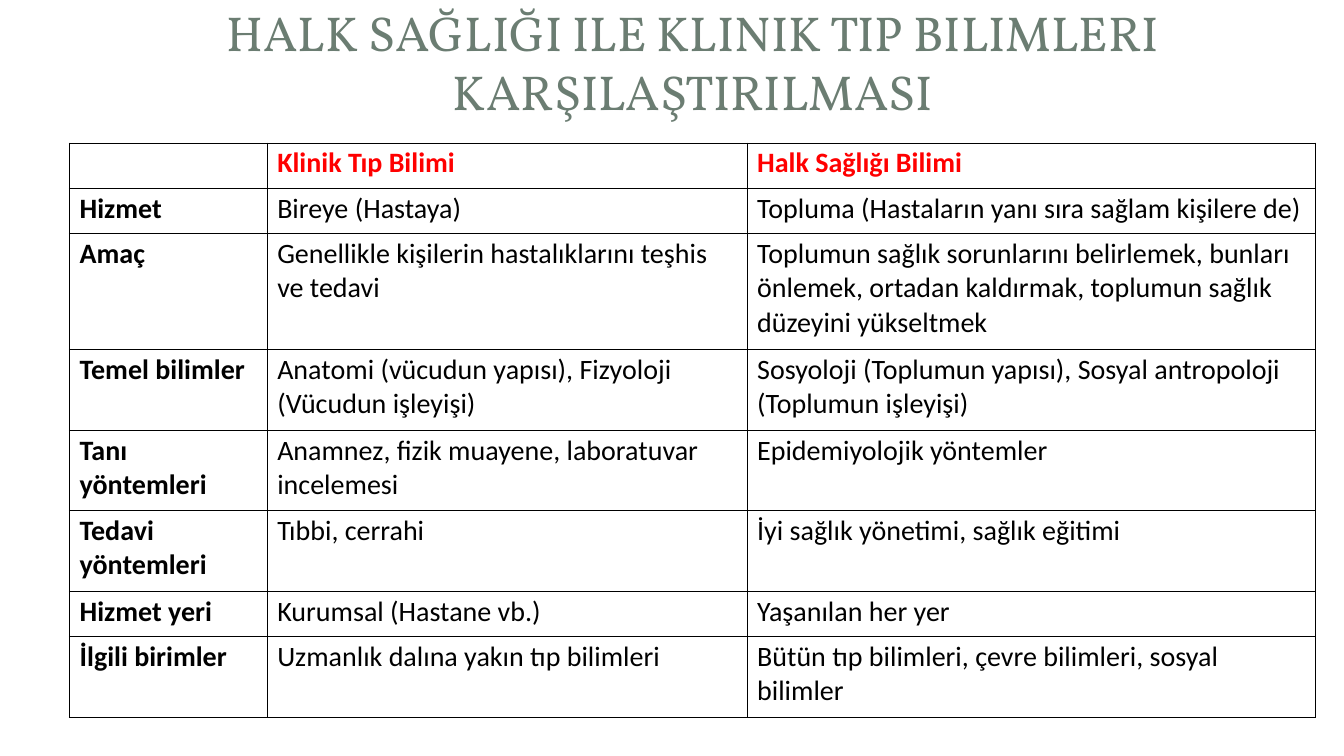
from dataclasses import dataclass

from lxml.etree import SubElement
from pptx import Presentation
from pptx.dml.color import RGBColor
from pptx.enum.text import MSO_ANCHOR, PP_ALIGN
from pptx.oxml.ns import qn
from pptx.util import Inches, Pt


@dataclass(frozen=True)
class Theme:
    title_font: str = "Vollkorn"
    body_font: str = "Calibri"
    title_size: int = 35
    body_size: int = 20
    title: str = "6B7D72"
    head: str = "FF0000"
    ink: str = "000000"
    rule: int = 1


THEME = Theme()
TITLE = "HALK SAĞLIĞI ILE KLINIK TIP BILIMLERI KARŞILAŞTIRILMASI"
COLS = [1.96, 4.76, 5.64]
LINE, PAD = 0.35, 0.1
ROWS = [
    ("", "Klinik Tıp Bilimi", "Halk Sağlığı Bilimi"),
    ("Hizmet", "Bireye (Hastaya)",
     "Topluma (Hastaların yanı sıra sağlam kişilere de)"),
    ("Amaç", "Genellikle kişilerin hastalıklarını teşhis\nve tedavi",
     "Toplumun sağlık sorunlarını belirlemek, bunları önlemek, "
     "ortadan kaldırmak, toplumun sağlık düzeyini yükseltmek"),
    ("Temel bilimler",
     "Anatomi (vücudun yapısı), Fizyoloji (Vücudun işleyişi)",
     "Sosyoloji (Toplumun yapısı), Sosyal antropoloji (Toplumun işleyişi)"),
    ("Tanı\nyöntemleri",
     "Anamnez, fizik muayene, laboratuvar\nincelemesi",
     "Epidemiyolojik yöntemler"),
    ("Tedavi\nyöntemleri", "Tıbbi, cerrahi",
     "İyi sağlık yönetimi, sağlık eğitimi"),
    ("Hizmet yeri", "Kurumsal (Hastane vb.)", "Yaşanılan her yer"),
    ("İlgili birimler", "Uzmanlık dalına yakın tıp bilimleri",
     "Bütün tıp bilimleri, çevre bilimleri, sosyal\nbilimler"),
]
LINES = [1, 1, 3, 2, 2, 2, 1, 2]


def style(frame, font, size, color, bold=False):
    for para in frame.paragraphs:
        para.font.name = font
        para.font.size = Pt(size)
        para.font.bold = bold
        para.font.color.rgb = RGBColor.from_string(color)


def add_title(slide, left, top, width, height):
    box = slide.shapes.add_textbox(
        Inches(left), Inches(top), Inches(width), Inches(height))
    frame = box.text_frame
    frame.word_wrap = True
    frame.vertical_anchor = MSO_ANCHOR.MIDDLE
    frame.margin_left = frame.margin_right = frame.margin_bottom = 0
    frame.margin_top = Inches(0.01)
    frame.text = TITLE
    frame.paragraphs[0].alignment = PP_ALIGN.CENTER
    style(frame, THEME.title_font, THEME.title_size, THEME.title)


def add_rules(cell):
    """Draw a line on all four sides of the cell."""
    props = cell._tc.get_or_add_tcPr()
    for index, side in enumerate(("lnL", "lnR", "lnT", "lnB")):
        line = props.makeelement(qn(f"a:{side}"), w=str(Pt(THEME.rule)))
        fill = SubElement(line, qn("a:solidFill"))
        SubElement(fill, qn("a:srgbClr"), val=THEME.ink)
        props.insert(index, line)


def fill_cell(cell, text, color, bold):
    cell.fill.background()
    cell.margin_left = Inches(PAD)
    cell.margin_right = cell.margin_bottom = 0
    cell.margin_top = Inches(0.03)
    cell.text_frame.text = text
    style(cell.text_frame, THEME.body_font, THEME.body_size, color, bold)
    add_rules(cell)


def add_grid(slide, left, top):
    highs = [LINE * count + PAD for count in LINES]
    table = slide.shapes.add_table(
        len(ROWS), len(COLS), Inches(left), Inches(top),
        Inches(sum(COLS)), Inches(sum(highs))).table
    table.horz_banding = False
    for col, width in zip(table.columns, COLS):
        col.width = Inches(width)
    for r, (texts, high) in enumerate(zip(ROWS, highs)):
        table.rows[r].height = Inches(high)
        for c, text in enumerate(texts):
            color = THEME.head if r == 0 else THEME.ink
            fill_cell(table.cell(r, c), text, color, r == 0 or c == 0)


def main():
    deck = Presentation()
    deck.slide_width, deck.slide_height = Inches(13.33), Inches(7.5)
    slide = deck.slides.add_slide(deck.slide_layouts[6])
    add_title(slide, 1, 0.01, 11.75, 1.19)
    add_grid(slide, 0.69, 1.42)
    deck.save("out.pptx")


if __name__ == "__main__":
    main()
